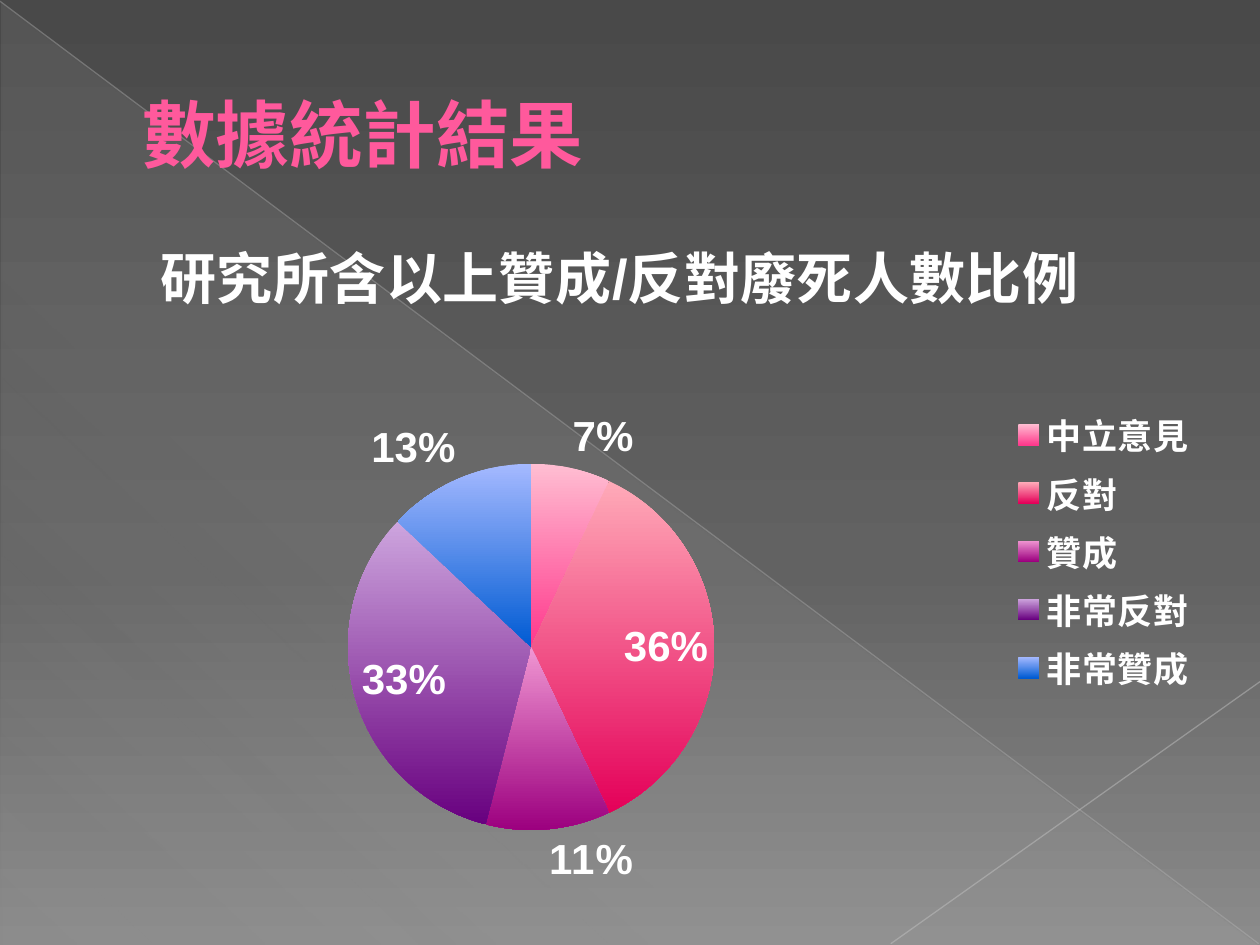
from lxml import etree
from pptx import Presentation
from pptx.chart.data import CategoryChartData
from pptx.dml.color import RGBColor
from pptx.enum.chart import XL_CHART_TYPE as CT, XL_LABEL_POSITION as LP, XL_LEGEND_POSITION as LG
from pptx.enum.shapes import MSO_CONNECTOR, MSO_SHAPE
from pptx.enum.text import MSO_ANCHOR
from pptx.oxml import parse_xml
from pptx.oxml.ns import nsdecls, qn
from pptx.util import Inches, Pt

SLICES = [
    ("中立意見", 7, "FFBED2", "FF388C"),
    ("反對", 36, "FFAAB8", "E40059"),
    ("贊成", 11, "F096D2", "9C007F"),
    ("非常反對", 33, "CDA5DE", "68007F"),
    ("非常贊成", 13, "A5B9FF", "005BD3"),
]


def rgb(color):
    """Turn a hex string into a colour."""
    return RGBColor.from_string(color)


def set_font(font, size, color, name="Arial"):
    """Apply bold text formatting."""
    font.size, font.bold, font.name = Pt(size), True, name
    font.color.rgb = rgb(color)


def set_alpha(element, percent):
    """Set the opacity of a colour element."""
    etree.SubElement(element, qn("a:alpha")).set("val", str(percent * 1000))


def set_gradient(fill, owner, stops, angle=90):
    """Fill with (position, colour, opacity) stops at a clockwise angle."""
    fill.gradient()
    fill.gradient_angle = 360 - angle
    gs_list = next(owner.iter(qn("a:gsLst")))
    for gs in list(gs_list):
        gs_list.remove(gs)
    for position, color, opacity in stops:
        gs = etree.SubElement(gs_list, qn("a:gs"), pos=str(position * 1000))
        clr = etree.SubElement(gs, qn("a:srgbClr"), val=color)
        if opacity < 100:
            set_alpha(clr, opacity)


def add_triangle(slide):
    """Add the pale triangle behind the content."""
    sp = slide.shapes.add_shape(
        MSO_SHAPE.RIGHT_TRIANGLE, Inches(0.01), Inches(0.02), Inches(9.98), Inches(7.48))
    sp.shadow.inherit = False
    sp.line.fill.background()
    stops = [(0, "D2D2D2", 10), (70, "D2D2D2", 8), (100, "D2D2D2", 1)]
    set_gradient(sp.fill, sp._element.spPr, stops, 133)


def add_line(slide, start, end, color, opacity):
    """Add a thin translucent line."""
    line = slide.shapes.add_connector(
        MSO_CONNECTOR.STRAIGHT, *[Inches(v) for v in start + end])
    line.line.width = Pt(0.75)
    line.line.color.rgb = rgb(color)
    sp_pr = line._element.spPr
    set_alpha(next(sp_pr.iter(qn("a:srgbClr"))), opacity)
    etree.SubElement(sp_pr, qn("a:effectLst"))


def add_title(slide, text):
    """Add the slide title."""
    tf = slide.shapes.add_textbox(Inches(0.5), Inches(0.29), Inches(9), Inches(1.53)).text_frame
    tf.word_wrap = True
    tf.vertical_anchor = MSO_ANCHOR.MIDDLE
    tf.margin_left = tf.margin_right = tf.margin_top = tf.margin_bottom = Inches(0.1)
    p = tf.paragraphs[0]
    p.text = text
    p._p.get_or_add_pPr().set("marL", str(Inches(0.53)))
    set_font(p.runs[0].font, 42, "FF599C", "TeX Gyre Adventor")


def set_plot_layout(chart, x, y, w, h):
    """Place the plot area by fractions of the chart."""
    plot_area = chart._chartSpace.chart.plotArea
    for old in plot_area.findall(qn("c:layout")):
        plot_area.remove(old)
    sizes = "".join(f'<c:{tag} val="{v}"/>' for tag, v in zip("xywh", (x, y, w, h)))
    plot_area.insert(0, parse_xml(
        f'<c:layout {nsdecls("c")}><c:manualLayout><c:layoutTarget val="inner"/>'
        f'<c:xMode val="edge"/><c:yMode val="edge"/>{sizes}</c:manualLayout></c:layout>'))


def add_pie(slide, title):
    """Add the pie chart with its title, legend and percentages."""
    data = CategoryChartData()
    data.categories = [name for name, *_ in SLICES]
    data.add_series("Series 1", [value for _, value, *_ in SLICES])
    chart = slide.shapes.add_chart(
        CT.PIE, Inches(0.23), Inches(1.56), Inches(9.38), Inches(5.63), data).chart
    chart.font.name = "Arial"
    chart.font.size = Pt(10)
    tf = chart.chart_title.text_frame
    tf.text = title
    set_font(tf.paragraphs[0].runs[0].font, 32, "FFFFFF")
    chart.chart_title.include_in_layout = False
    chart.has_legend = True
    chart.legend.position = LG.RIGHT
    chart.legend.include_in_layout = False
    set_font(chart.legend.font, 20, "FFFFFF")
    plot = chart.plots[0]
    plot.vary_by_categories = True
    plot.has_data_labels = True
    labels = plot.data_labels
    labels.show_percentage, labels.show_value = True, False
    labels.number_format, labels.number_format_is_linked = "0%", False
    labels.position = LP.BEST_FIT
    set_font(labels.font, 24, "FFFFFF")
    for i, (_, _, light, dark) in enumerate(SLICES):
        fmt = plot.series[0].points[i].format
        fmt.line.fill.background()
        d_pt = plot.series[0]._element.findall(qn("c:dPt"))[i]
        set_gradient(fmt.fill, d_pt, [(0, light, 100), (100, dark, 100)])
    set_plot_layout(chart, 0.27, 0.37, 0.31, 0.53)


def main():
    """Build and save the slide."""
    prs = Presentation()
    prs.slide_width, prs.slide_height = Inches(10), Inches(7.5)
    slide = prs.slides.add_slide(prs.slide_layouts[6])
    stops = [(0, "494949", 100), (60, "626262", 100), (100, "8B8B8B", 100)]
    set_gradient(slide.background.fill, slide._element, stops)
    add_triangle(slide)
    add_line(slide, (0, 0.01), (9.99, 7.49), "BEBEBE", 35)
    add_line(slide, (10, 5.41), (7.07, 7.49), "C5C5C5", 45)
    add_title(slide, "數據統計結果")
    add_pie(slide, "研究所含以上贊成/反對廢死人數比例")
    prs.save("out.pptx")


if __name__ == "__main__":
    main()
